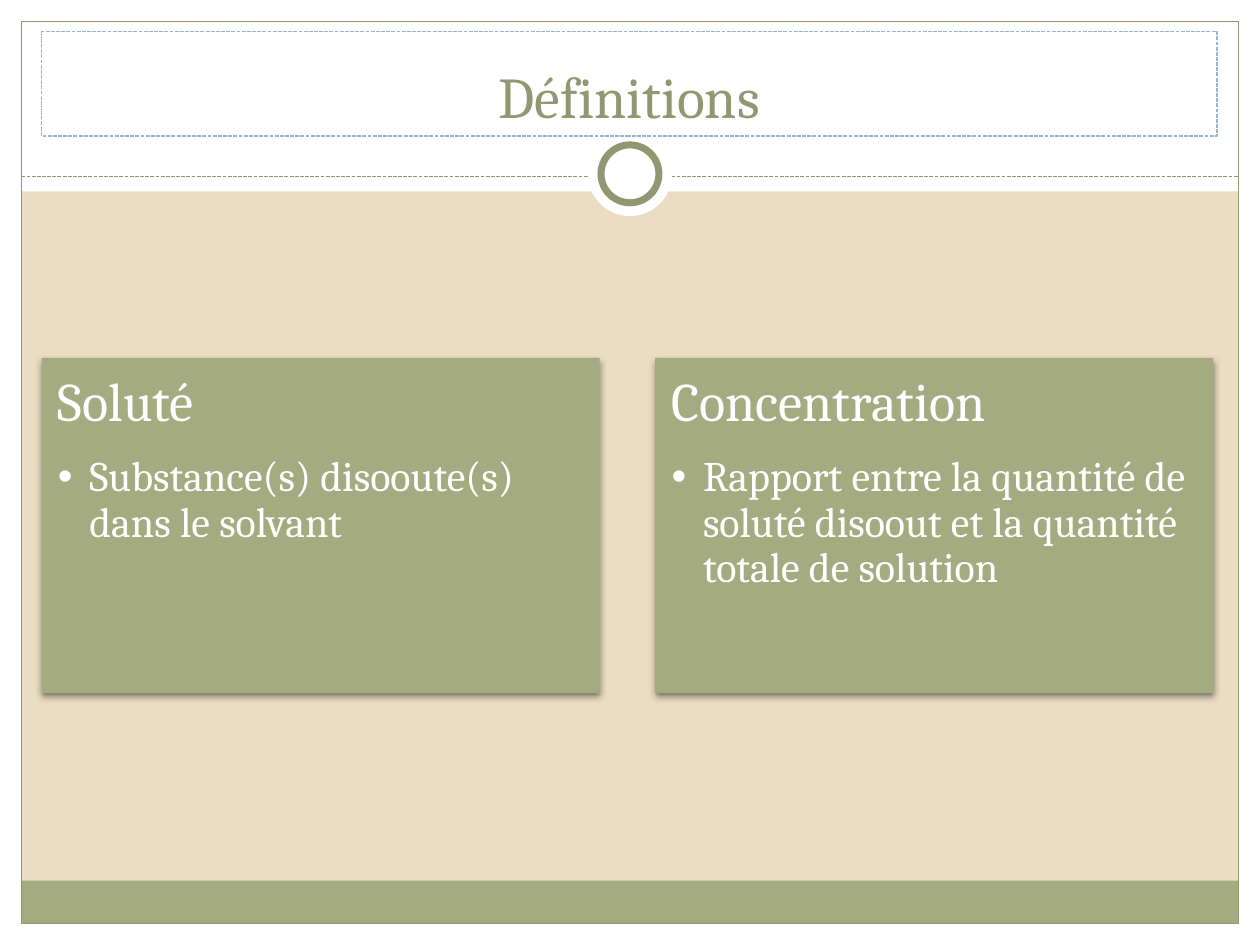
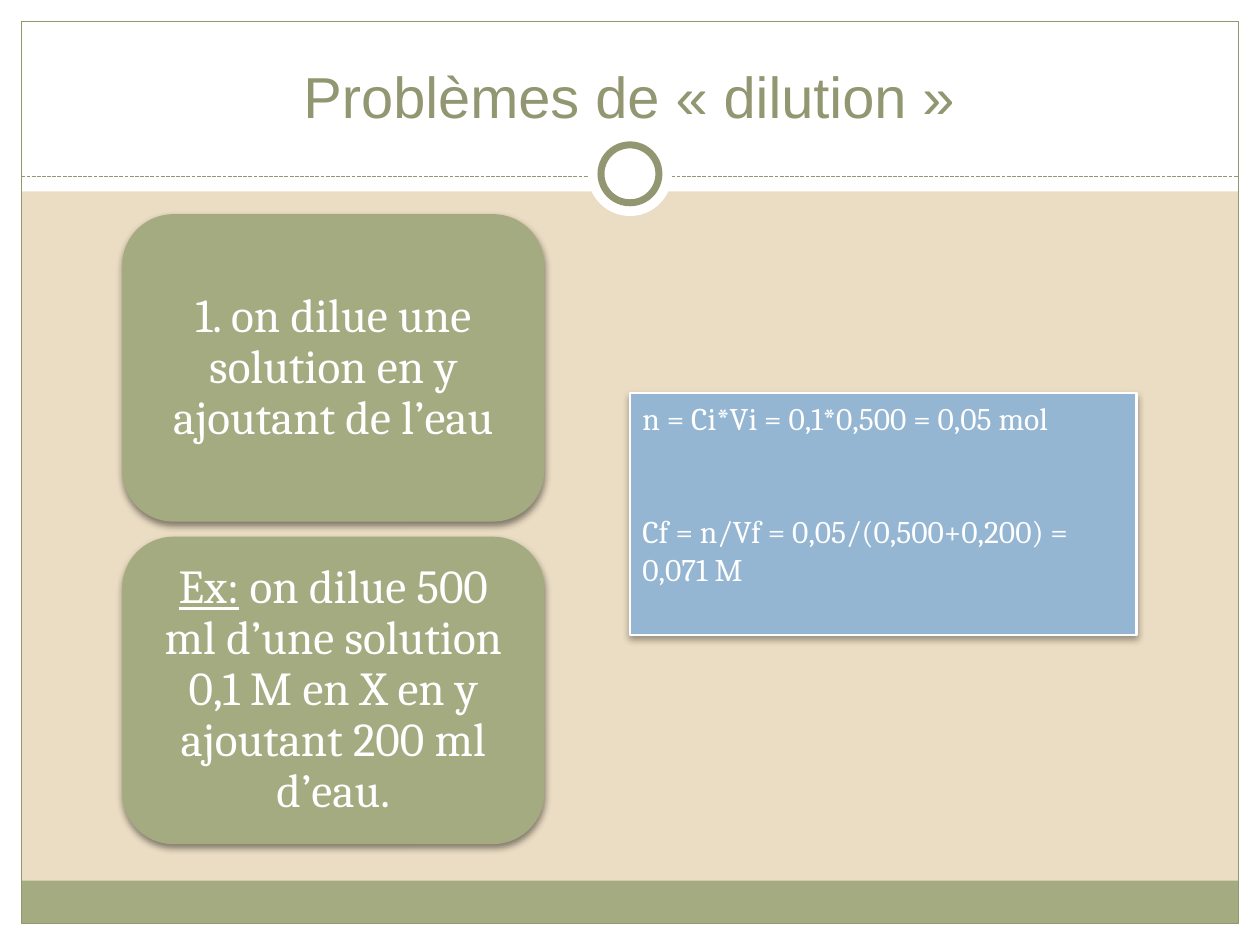
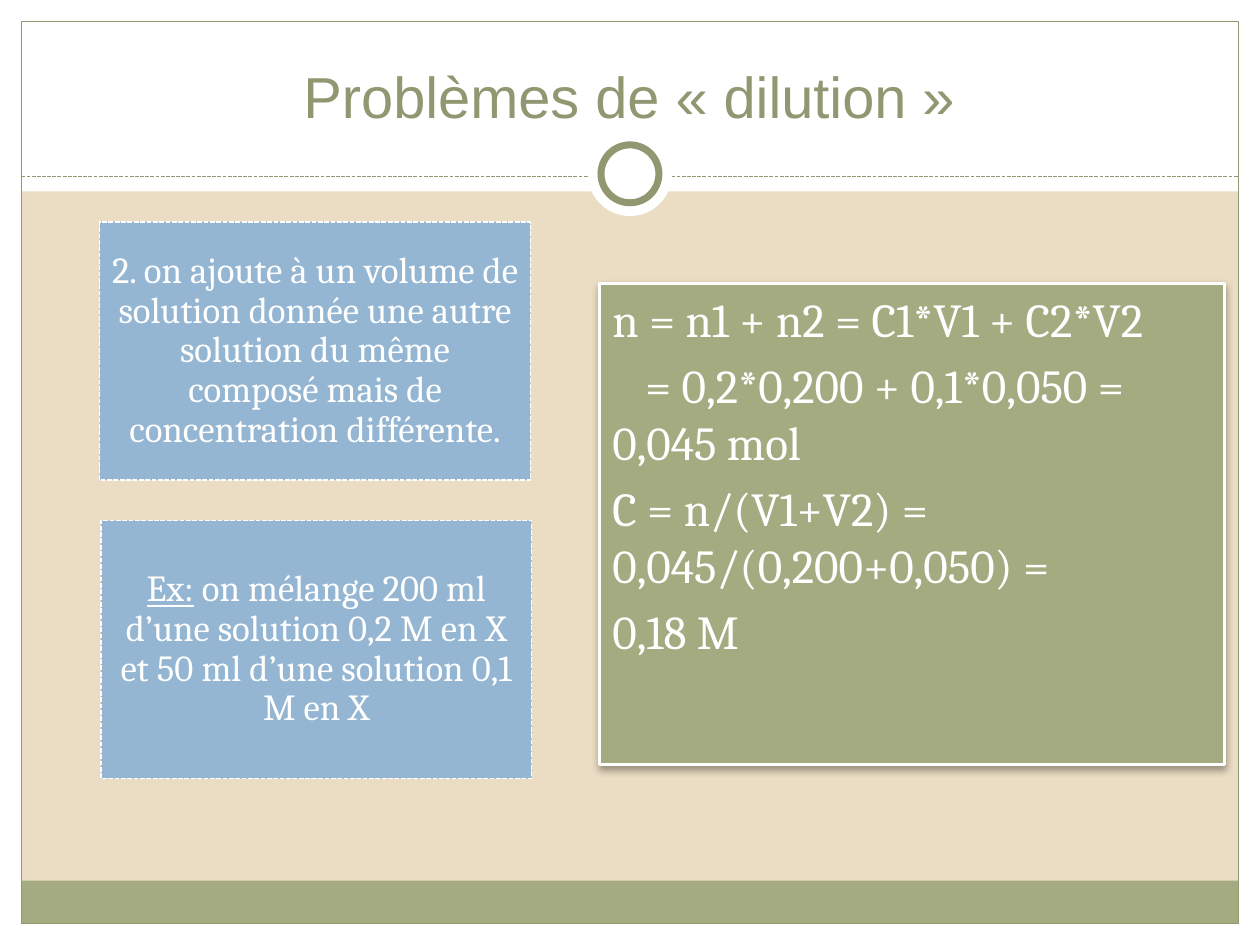
from pptx import Presentation
from pptx.dml.color import RGBColor
from pptx.enum.dml import MSO_LINE
from pptx.enum.shapes import MSO_CONNECTOR, MSO_SHAPE
from pptx.enum.text import MSO_ANCHOR, MSO_AUTO_SIZE, PP_ALIGN
from pptx.oxml.ns import qn
from pptx.util import Inches, Pt
from lxml.etree import SubElement

# Content
TERMS = [
    ("Soluté", "Substance(s) disooute(s) dans le solvant"),
    ("Concentration",
     "Rapport entre la quantité de soluté disoout et la quantité totale de solution"),
]
DILUTION = "Problèmes de « dilution »"
WATER = [
    ("", "1. on dilue une solution en y ajoutant de l’eau"),
    ("Ex:", " on dilue 500 ml d’une solution 0,1 M en X en y ajoutant 200 ml d’eau."),
]
WATER_SUM = [
    "n = Ci*Vi = 0,1*0,500 = 0,05 mol",
    "Cf = n/Vf = 0,05/(0,500+0,200) = 0,071 M",
]
MIX = [
    ("", "2. on ajoute à un volume de solution donnée une autre solution "
         "du même composé mais de concentration différente."),
    ("Ex:", " on mélange 200 ml d’une solution 0,2 M en X "
            "et 50 ml d’une solution 0,1 M en X"),
]
MIX_SUM = [
    "n = n1 + n2 = C1*V1 + C2*V2",
    "= 0,2*0,200 + 0,1*0,050 = 0,045 mol",
    "C = n/(V1+V2) = 0,045/(0,200+0,050) =",
    "0,18 M",
]

# Shared look
WIDE, HIGH = 10, 7.5
EDGE = 0.17
RULE = 1.4
SAND, GREEN, OLIVE, BLUE, WHITE = "EBDDC3", "A5AB81", "929772", "94B6D2", "FFFFFF"
SERIF, SANS = "Cambria", "Arial"
RECT, ROUND, OVAL = MSO_SHAPE.RECTANGLE, MSO_SHAPE.ROUNDED_RECTANGLE, MSO_SHAPE.OVAL
DASH = MSO_LINE.SQUARE_DOT


def color(code):
    return RGBColor.from_string(code)


def paint(shape, fill=None, line=None, width=0.75, dash=None):
    if fill:
        shape.fill.solid()
        shape.fill.fore_color.rgb = color(fill)
    else:
        shape.fill.background()
    if line:
        shape.line.color.rgb = color(line)
        shape.line.width = Pt(width)
        shape.line.dash_style = dash
    else:
        shape.line.fill.background()


def place(shape, box):
    shape.left, shape.top, shape.width, shape.height = map(Inches, box)


def draw(slide, kind, box, **look):
    shape = slide.shapes.add_shape(kind, *map(Inches, box))
    paint(shape, **look)
    shape.shadow.inherit = False
    return shape


def shade(shape, alpha):
    """Give the shape a soft shadow straight below it."""
    shape.shadow.inherit = False
    effects = shape.element.spPr.find(qn("a:effectLst"))
    outer = SubElement(effects, qn("a:outerShdw"), blurRad=str(Pt(4)),
                       dist=str(Pt(2)), dir="5400000", rotWithShape="0")
    black = SubElement(outer, qn("a:srgbClr"), val="000000")
    SubElement(black, qn("a:alpha"), val=str(alpha * 1000))


def style(para, size, face=SERIF, ink=WHITE):
    for run in para.runs:
        run.font.size = Pt(size)
        run.font.name = face
        run.font.color.rgb = color(ink)


def indent(para, left, first, mark=None):
    props = para._p.get_or_add_pPr()
    props.set("marL", str(Inches(left)))
    props.set("indent", str(Inches(first)))
    if mark:
        SubElement(props, qn("a:buFont"), typeface="Arial")
        SubElement(props, qn("a:buChar"), char=mark)
    else:
        SubElement(props, qn("a:buNone"))


def setup(shape, anchor, across=0.1, down=0.05):
    frame = shape.text_frame
    frame.word_wrap = True
    frame.auto_size = MSO_AUTO_SIZE.NONE
    frame.vertical_anchor = anchor
    frame.margin_left = frame.margin_right = Inches(across)
    frame.margin_top = frame.margin_bottom = Inches(down)
    return frame


def write(frame, lines, size):
    """Write left-aligned lines and return their paragraphs."""
    frame.text = "\n".join(lines)
    for para in frame.paragraphs:
        para.alignment = PP_ALIGN.LEFT
        style(para, size)
    return frame.paragraphs


def label(shape, lead, text, size, across, down):
    """Centre a text that may start with an underlined lead."""
    para = setup(shape, MSO_ANCHOR.MIDDLE, across, down).paragraphs[0]
    para.alignment = PP_ALIGN.CENTER
    para.line_spacing = 0.9
    for part in filter(None, (lead, text)):
        run = para.add_run()
        run.text = part
        if part == lead:
            run.font.underline = True
    style(para, size)


def start(deck, layout, title, face):
    slide = deck.slides.add_slide(deck.slide_layouts[layout])
    head = slide.shapes.title
    place(head, (0.33, 0.25, 9.33, 0.83))
    frame = setup(head, MSO_ANCHOR.BOTTOM)
    frame.text = title
    frame.paragraphs[0].alignment = PP_ALIGN.CENTER
    style(frame.paragraphs[0], 33, face, OLIVE)
    return slide


def ring(slide, size, **look):
    return draw(slide, OVAL, ((WIDE - size) / 2, 1.38 - size / 2, size, size),
                fill=WHITE, **look)


def dress(master, slide):
    """Draw the shared frame on a slide and move it to the master."""
    inner = WIDE - 2 * EDGE
    strips = [
        (0, HIGH - EDGE, WIDE, EDGE),
        (0, 0, WIDE, 1.52),
        (0, 0, EDGE, HIGH),
        (WIDE - EDGE, 0, EDGE, HIGH),
    ]
    parts = [draw(slide, RECT, box, fill=WHITE) for box in strips]
    parts.append(draw(slide, RECT, (EDGE, 6.99, inner, 0.34), fill=GREEN))
    parts.append(draw(slide, RECT, (EDGE, EDGE, inner, HIGH - 2 * EDGE), line=OLIVE))
    rule = slide.shapes.add_connector(
        MSO_CONNECTOR.STRAIGHT, *map(Inches, (EDGE, RULE, WIDE - EDGE, RULE)))
    rule.line.color.rgb = color(OLIVE)
    rule.line.width = Pt(0.75)
    rule.line.dash_style = DASH
    SubElement(rule.element.spPr, qn("a:effectLst"))
    parts += [rule, ring(slide, 0.67), ring(slide, 0.46, line=OLIVE, width=4)]

    master.background.fill.solid()
    master.background.fill.fore_color.rgb = color(SAND)
    for n, part in enumerate(parts):
        part.element.xpath(".//p:cNvPr")[0].set("id", str(100 + n))
        master.shapes.element.insert(2 + n, part.element)


def terms(deck):
    slide = start(deck, 5, "Définitions", SERIF)
    dress(deck.slide_master, slide)
    paint(slide.shapes.title, line=BLUE, dash=DASH)
    for n, (term, sense) in enumerate(TERMS):
        card = draw(slide, RECT, (0.33 + n * 4.87, 2.84, 4.43, 2.66), fill=GREEN)
        shade(card, 45)
        name, point = write(setup(card, MSO_ANCHOR.TOP, 0.13, 0.13), (term, sense), 24)
        style(name, 31)
        name.line_spacing = point.line_spacing = 0.9
        name.space_after = Pt(13)
        indent(point, 0.25, -0.25, "•")


def water(deck):
    slide = start(deck, 5, DILUTION, SANS)
    for n, (lead, text) in enumerate(WATER):
        card = draw(slide, ROUND, (0.97, 1.7 + n * 2.56, 3.35, 2.44), fill=GREEN)
        shade(card, 45)
        label(card, lead, text, 27, 0.11, 0.06)
    answer = draw(slide, RECT, (5, 3.12, 4.02, 1.92), fill=BLUE, line=WHITE, width=1.57)
    shade(answer, 35)
    paras = write(setup(answer, MSO_ANCHOR.TOP), WATER_SUM, 18)
    paras[1].space_before = Pt(43)


def mix(deck):
    slide = start(deck, 1, DILUTION, SANS)
    answer = slide.placeholders[1]
    place(answer, (4.76, 2.25, 4.96, 3.82))
    paint(answer, GREEN, WHITE, 1.57)
    shade(answer, 35)
    for n, para in enumerate(write(setup(answer, MSO_ANCHOR.TOP), MIX_SUM, 27)):
        indent(para, 0, 0.26 if n == 1 else 0)
    for n, (lead, text) in enumerate(MIX):
        card = draw(slide, RECT, (0.79 + n * 0.01, 1.76 + n * 2.37, 3.42, 2.05),
                    fill=BLUE, line=WHITE, width=0.9, dash=DASH)
        label(card, lead, text, 21, 0.09, 0.09)


def main():
    deck = Presentation()
    deck.slide_width, deck.slide_height = Inches(WIDE), Inches(HIGH)
    for build in (terms, water, mix):
        build(deck)
    deck.save("out.pptx")


if __name__ == "__main__":
    main()
